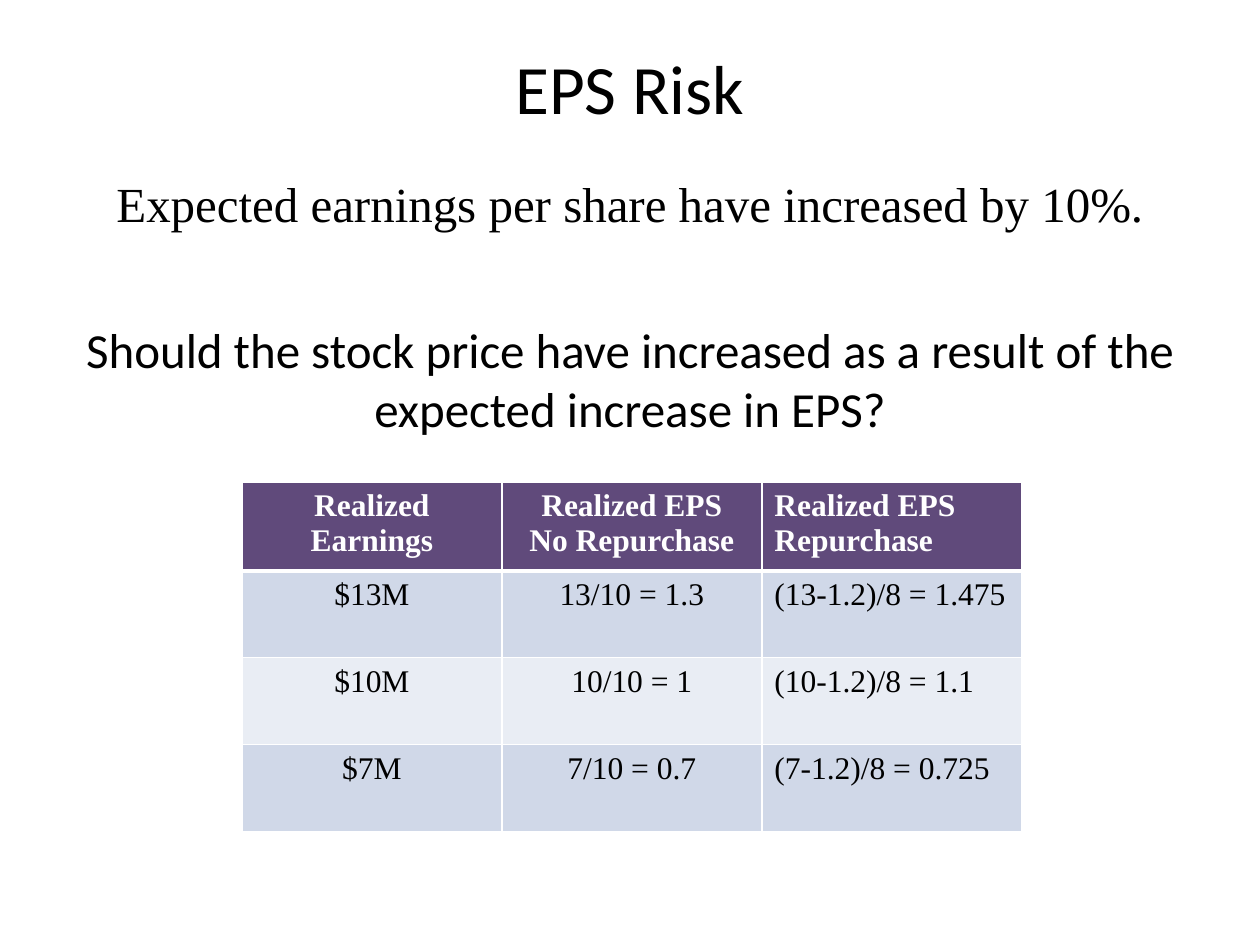
from pptx import Presentation
from pptx.dml.color import RGBColor
from pptx.enum.text import MSO_ANCHOR, PP_ALIGN
from pptx.oxml import parse_xml
from pptx.oxml.ns import nsdecls
from pptx.util import Inches, Pt

BLACK = RGBColor(0x00, 0x00, 0x00)
WHITE = RGBColor(0xFF, 0xFF, 0xFF)
PURPLE = RGBColor(0x60, 0x4A, 0x7B)
BLUE_BAND = RGBColor(0xD0, 0xD8, 0xE8)
PALE_BAND = RGBColor(0xE9, 0xED, 0xF4)
SANS = "Calibri"
SERIF = "Times New Roman"

presentation = Presentation()
presentation.slide_width = Inches(10)
presentation.slide_height = Inches(7.5)
slide = presentation.slides.add_slide(presentation.slide_layouts[6])


def write(paragraph, text, size, font, color=BLACK, bold=False, align=PP_ALIGN.CENTER):
    paragraph.alignment = align
    run = paragraph.add_run()
    run.text = text
    run.font.size = Pt(size)
    run.font.name = font
    run.font.bold = bold
    run.font.color.rgb = color


def set_borders(cell, top, bottom):
    """Draw white cell borders; top and bottom widths are in points."""
    properties = cell._tc.get_or_add_tcPr()
    widths = {"lnL": 1, "lnR": 1, "lnT": top, "lnB": bottom}
    for position, (side, width) in enumerate(widths.items()):
        properties.insert(position, parse_xml(
            f'<a:{side} {nsdecls("a")} w="{Pt(width)}"><a:solidFill>'
            f'<a:srgbClr val="{WHITE}"/></a:solidFill></a:{side}>'))


# Title
title = slide.shapes.add_textbox(Inches(0.5), Inches(0.3), Inches(9), Inches(0.78)).text_frame
title.word_wrap = True
title.vertical_anchor = MSO_ANCHOR.MIDDLE
write(title.paragraphs[0], "EPS Risk", 39.6, SANS)

# Statement and question
body = slide.shapes.add_textbox(Inches(0.5), Inches(1.33), Inches(9), Inches(5.37)).text_frame
body.word_wrap = True
statement = body.paragraphs[0]
statement.space_before = Pt(4)
write(statement, "Expected earnings per share have increased by 10%.", 28, SERIF)
question = body.add_paragraph()
question.space_before = Pt(49.5)
write(question, "Should the stock price have increased as a result of the expected increase in EPS?",
      28, SANS)

# Earnings table: each cell is a list of paragraphs
rows = [
    [["Realized Earnings"], ["Realized EPS", "No Repurchase"], ["Realized EPS", "Repurchase"]],
    [["$13M"], ["13/10 = 1.3"], ["(13-1.2)/8 = 1.475"]],
    [["$10M"], ["10/10 = 1"], ["(10-1.2)/8 = 1.1"]],
    [["$7M"], ["7/10 = 0.7"], ["(7-1.2)/8 = 0.725"]],
]
alignments = [PP_ALIGN.CENTER, PP_ALIGN.CENTER, PP_ALIGN.LEFT]
fills = [PURPLE, BLUE_BAND, PALE_BAND, BLUE_BAND]
table = slide.shapes.add_table(len(rows), len(alignments), Inches(1.92), Inches(3.83),
                               Inches(6.19), Inches(2.76)).table

for row_index, (row, fill) in enumerate(zip(rows, fills)):
    header = row_index == 0
    for column_index, (lines, align) in enumerate(zip(row, alignments)):
        cell = table.cell(row_index, column_index)
        cell.fill.solid()
        cell.fill.fore_color.rgb = fill
        set_borders(cell, top=3 if row_index == 1 else 1, bottom=3 if header else 1)
        for line_index, line in enumerate(lines):
            frame = cell.text_frame
            paragraph = frame.add_paragraph() if line_index else frame.paragraphs[0]
            write(paragraph, line, 18, SERIF, WHITE if header else BLACK, header, align)

presentation.save("out.pptx")
